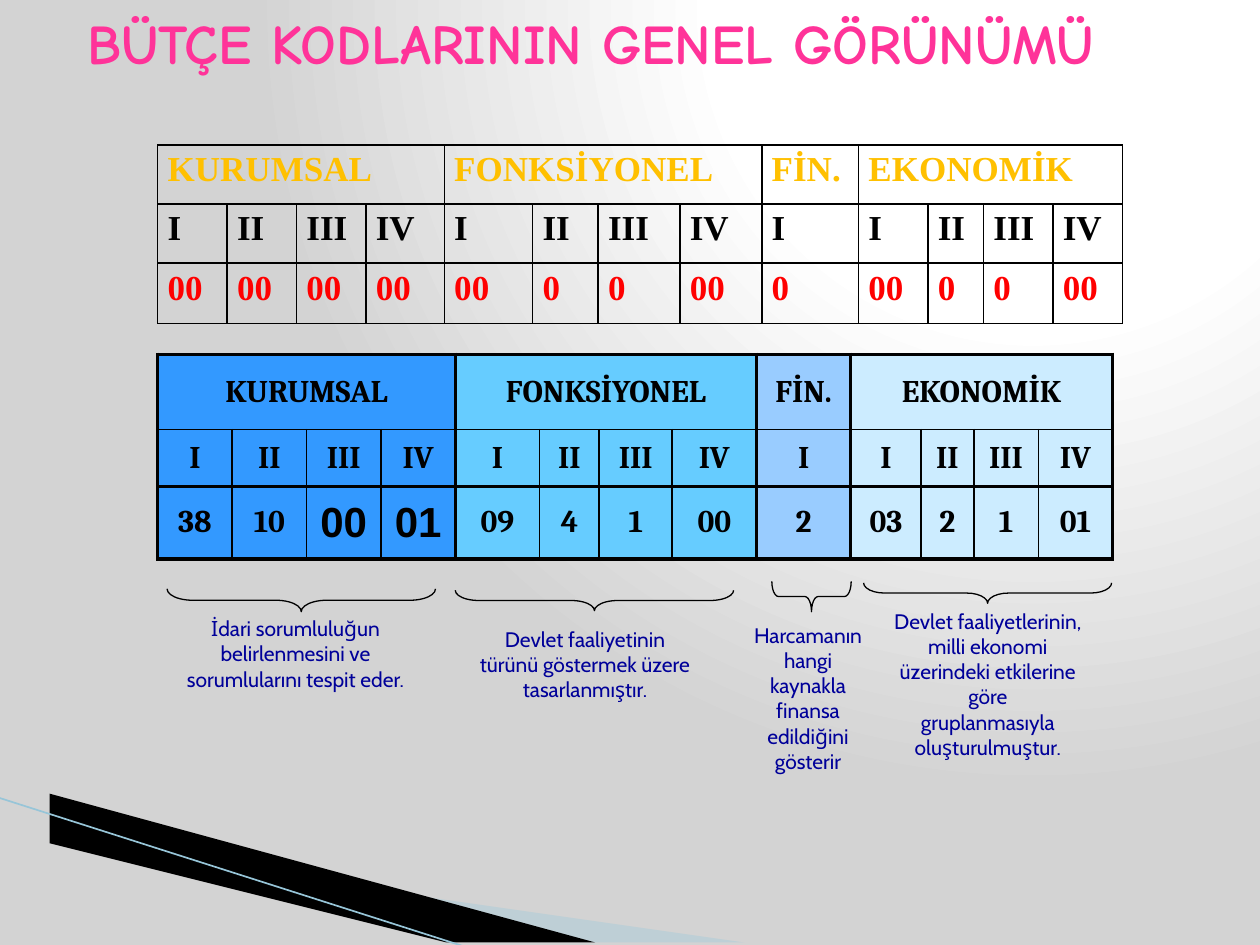
from pptx import Presentation
from pptx.dml.color import RGBColor
from pptx.enum.shapes import MSO_CONNECTOR, MSO_SHAPE
from pptx.enum.text import MSO_ANCHOR, MSO_AUTO_SIZE, PP_ALIGN
from pptx.oxml import parse_xml
from pptx.oxml.ns import nsdecls
from pptx.util import Cm, Pt
from lxml.etree import SubElement

COLORS = {
    "title": "FF3399", "black": "000000", "gold": "FFC000", "red": "FF0000",
    "note": "000099", "wing": "A0CBDC", "edge": "97C5D8",
    "white": "FFFFFF", "grey": "D3D3D3",
}
GROUP_FILLS = ["3399FF", "66CCFF", "99CCFF", "CCECFF"]
GROUPS = [("KURUMSAL", 4), ("FONKSİYONEL", 4), ("FİN.", 1), ("EKONOMİK", 4)]
LEVELS = ["I", "II", "III", "IV"]


def rgb(name):
    return RGBColor.from_string(COLORS.get(name, name))


def style(p, font, size, color, bold=False):
    p.font.name, p.font.size, p.font.bold = font, Pt(size), bold
    p.font.color.rgb = rgb(color)


def set_borders(cell, widths):
    tcPr = cell._tc.get_or_add_tcPr()
    for i, (side, width) in enumerate(zip("LRTB", widths)):
        tcPr.insert(i, parse_xml(
            f'<a:ln{side} {nsdecls("a")} w="{Pt(width)}"><a:solidFill>'
            f'<a:srgbClr val="{COLORS["black"]}"/></a:solidFill></a:ln{side}>'))


def add_background(slide):
    stops = "".join(
        f'<a:gs pos="{pos}"><a:srgbClr val="{COLORS[name]}"/></a:gs>'
        for pos, name in [(0, "white"), (40000, "white"), (100000, "grey")])
    slide._element.cSld.insert(0, parse_xml(
        f'<p:bg {nsdecls("p", "a")}><p:bgPr><a:gradFill><a:gsLst>{stops}</a:gsLst>'
        '<a:path path="circle"><a:fillToRect l="65000" b="98000"/></a:path>'
        '</a:gradFill><a:effectLst/></p:bgPr></p:bg>'))


def add_wedge(slide, x, y, points, color):
    fb = slide.shapes.build_freeform(x + points[0][0], y + points[0][1], scale=Cm(1))
    fb.add_line_segments([(x + dx, y + dy) for dx, dy in points[1:]])
    sp = fb.convert_to_shape()
    sp.shadow.inherit = False
    sp.fill.solid()
    sp.fill.fore_color.rgb = rgb(color)
    sp.line.fill.background()
    return sp


def add_corner(slide, x, y):
    wing = add_wedge(slide, x + 1.42, y + 0.43,
                     [(0, 0.03), (13.72, 2.57), (10.19, 2.57), (0, 0)], "wing")
    clr = wing.fill._xPr.find(".//{*}srgbClr")
    SubElement(clr, clr.tag.replace("srgbClr", "alpha"), val="40000")
    add_wedge(slide, x + 1.37, y + 0.4,
              [(0, 0), (10.26, 2.6), (8.1, 2.62), (0.02, 0.03)], "black")
    line = slide.shapes.add_connector(
        MSO_CONNECTOR.STRAIGHT, Cm(x), Cm(y), Cm(x + 9.45), Cm(y + 3.02))
    line.line.color.rgb = rgb("edge")
    line.line.width = Pt(0.95)
    spPr = line._element.spPr
    SubElement(spPr, spPr[0].tag.replace("xfrm", "effectLst"))


def add_title(slide, box):
    sp = slide.shapes.title
    sp.left, sp.top, sp.width, sp.height = map(Cm, box)
    tf = sp.text_frame
    tf.text = "BÜTÇE KODLARININ GENEL GÖRÜNÜMÜ"
    tf.auto_size = MSO_AUTO_SIZE.NONE
    tf.vertical_anchor = MSO_ANCHOR.TOP
    p = tf.paragraphs[0]
    p.alignment = PP_ALIGN.LEFT
    p.line_spacing = 1.15
    style(p, "Comic Neue", 32, "title", True)


def add_code_table(slide, x, y, cols, rows, codes, format_cell):
    table = slide.shapes.add_table(
        len(rows), len(cols), Cm(x), Cm(y), Cm(sum(cols)), Cm(sum(rows))).table
    table.first_row = table.horz_banding = False
    for col, width in zip(table.columns, cols):
        col.width = Cm(width)
    for row, height in zip(table.rows, rows):
        row.height = Cm(height)
    c = 0
    for g, (name, span) in enumerate(GROUPS):
        for k in range(span):
            texts = [name if k == 0 else "", LEVELS[k], codes[c + k]]
            for r, text in enumerate(texts):
                cell = table.cell(r, c + k)
                cell.text = text
                first = k == 0 or r == 0
                last = k == span - 1 or r == 0
                format_cell(cell, r, g, first, last)
        if span > 1:
            table.cell(0, c).merge(table.cell(0, c + span - 1))
        c += span


def format_plain(cell, r, g, first, last):
    cell.fill.background()
    set_borders(cell, [1] * 4)
    cell.margin_left = cell.margin_right = Cm(0.2)
    cell.margin_top = cell.margin_bottom = 0
    p = cell.text_frame.paragraphs[0]
    p.line_spacing = 1.15
    style(p, "Times New Roman", 20, ["gold", "black", "red"][r], True)


def format_colored(cell, r, g, first, last):
    cell.fill.solid()
    cell.fill.fore_color.rgb = rgb(GROUP_FILLS[g])
    set_borders(cell, [2 if first else 1, 2 if last else 1,
                       1 if r == 1 else 2, 1 if r == 0 else 2])
    cell.vertical_anchor = MSO_ANCHOR.MIDDLE
    p = cell.text_frame.paragraphs[0]
    p.alignment = PP_ALIGN.CENTER
    large = r == 2 and g == 0 and cell.text in ("00", "01")
    style(p, "Arial" if large else "Cambria", 24 if large else 18, "black", True)


def add_brace(slide, box, curve):
    x, y, w, h = box
    sp = slide.shapes.add_shape(
        MSO_SHAPE.LEFT_BRACE, Cm(x + (w - h) / 2), Cm(y + (h - w) / 2), Cm(h), Cm(w))
    sp.rotation = 270
    sp.adjustments[0] = curve
    sp.shadow.inherit = False
    sp.fill.background()
    sp.line.color.rgb = rgb("black")
    sp.line.width = Pt(0.75)


def add_note(slide, box, text):
    tf = slide.shapes.add_textbox(*map(Cm, box)).text_frame
    tf.word_wrap = True
    tf.auto_size = MSO_AUTO_SIZE.SHAPE_TO_FIT_TEXT
    tf.text = text
    for p in tf.paragraphs:
        p.alignment = PP_ALIGN.CENTER
        style(p, "Cabin", 12, "note")


def main():
    prs = Presentation()
    prs.slide_width, prs.slide_height = Cm(25.4), Cm(19.05)
    slide = prs.slides.add_slide(prs.slide_layouts[5])
    add_background(slide)
    add_corner(slide, -0.03, 16.08)
    add_title(slide, (1.5, -0.15, 28.19, 1.73))
    add_code_table(
        slide, 3.18, 2.92,
        [1.4, 1.4, 1.4, 1.58, 1.78, 1.32, 1.65, 1.65, 1.95, 1.4, 1.12, 1.4, 1.4],
        [1.19, 1.19, 1.22],
        ["00", "00", "00", "00", "00", "0", "0", "00", "0", "00", "0", "0", "00"],
        format_plain)
    add_code_table(
        slide, 3.18, 7.14,
        [1.5, 1.5, 1.5, 1.5, 1.7, 1.2, 1.47, 1.7, 1.9, 1.42, 1.06, 1.3, 1.5],
        [1.52, 1.14, 1.47],
        ["38", "10", "00", "01", "09", "4", "1", "00", "2", "03", "2", "1", "01"],
        format_colored)
    notes = [
        ((3.37, 11.87, 5.41, 0.46), 1.11, (3.38, 12.29, 5.16, 1.8),
         "İdari sorumluluğun belirlenmesini ve sorumlularını tespit eder."),
        ((9.18, 11.9, 5.61, 0.41), 1.16, (9.32, 12.5, 4.95, 1.8),
         "Devlet faaliyetinin türünü göstermek üzere tasarlanmıştır."),
        ((15.56, 11.72, 1.6, 0.61), 0.22, (14.78, 12.42, 3.02, 3.35),
         "Harcamanın hangi kaynakla finansa edildiğini gösterir"),
        ((17.41, 11.75, 5, 0.41), 1.04, (17.63, 12.14, 4.57, 3.33),
         "Devlet faaliyetlerinin, milli ekonomi üzerindeki etkilerine göre\n"
         "gruplanmasıyla oluşturulmuştur."),
    ]
    for brace_box, curve, note_box, text in notes:
        add_brace(slide, brace_box, curve)
        add_note(slide, note_box, text)
    prs.save("out.pptx")


if __name__ == "__main__":
    main()
